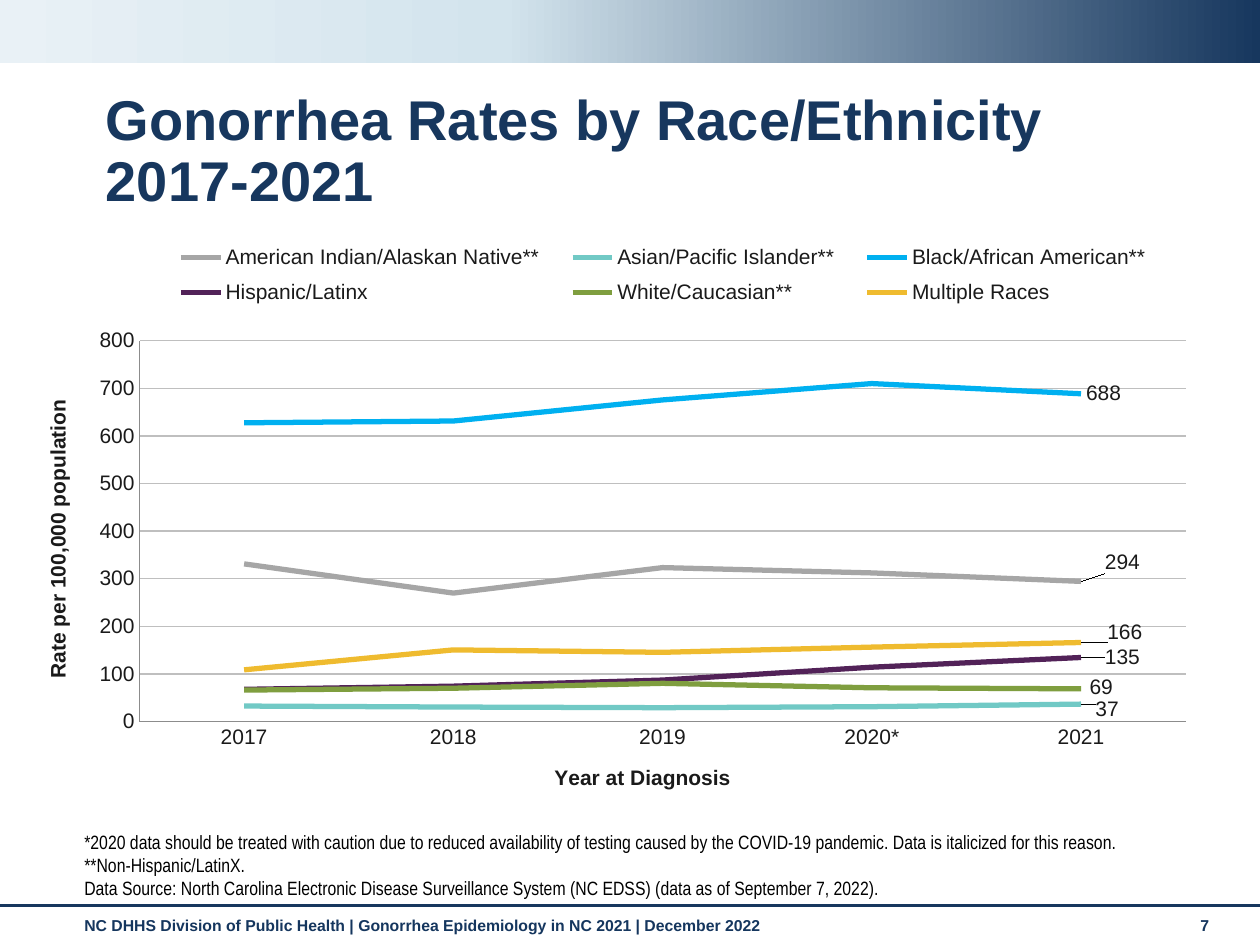
from copy import deepcopy

from lxml import etree
from pptx import Presentation
from pptx import util as u
from pptx.chart import data as chart_data
from pptx.dml import color
from pptx.enum import chart as charts, shapes, text
from pptx.oxml import ns, parse_xml

Cm, Pt, RGB = u.Cm, u.Pt, color.RGBColor.from_string

THEME = {
    "font": "Arial", "note_font": "Arial Narrow",
    "navy": "17375E", "footer": "15365E", "ink": "1A1A1A", "black": "000000",
    "grid": "BFBFBF", "axis": "8C8C8C",
    "banner": [(0, "17375E"), (0.6, "D3E4ED"), (1, "E9F1F6")],
    "title_size": 32, "chart_size": 12, "note_size": 11, "footer_size": 9,
}

YEARS = ["2017", "2018", "2019", "2020*", "2021"]
SERIES = [
    ("American Indian/Alaskan Native**", "A6A6A6", (331.2, 269.8, 323.3, 312.2, 294.4), (0.016, -0.032)),
    ("Asian/Pacific Islander**", "71C9C5", (32.7, 30.6, 29.2, 31.3, 36.7), (0.008, 0.008)),
    ("Black/African American**", "00B0F0", (627.5, 631.2, 675.5, 709.9, 688.4), None),
    ("Hispanic/Latinx", "522258", (67.7, 74.4, 87.2, 114.2, 134.6), (0.016, 0)),
    ("White/Caucasian**", "7F9E3F", (66.2, 70, 80.4, 71, 68.8), (0.003, -0.002)),
    ("Multiple Races", "EFBB2F", (108.7, 150.6, 145.4, 156.4, 166.1), (0.018, -0.017)),
]
NOTES = [
    "*2020 data should be treated with caution due to reduced availability of testing caused by the COVID-19 pandemic. Data is italicized for this reason.",
    "**Non-Hispanic/LatinX.",
    "Data Source: North Carolina Electronic Disease Surveillance System (NC EDSS) (data as of September 7, 2022).",
]


def write_text(shape, box, lines, anchor, spacing, font_format):
    shape.left, shape.top, shape.width, shape.height = map(Cm, box)
    frame = shape.text_frame
    frame.text = "\n".join(lines)
    frame.word_wrap = True
    frame.auto_size = text.MSO_AUTO_SIZE.NONE
    frame.vertical_anchor = anchor
    for paragraph in frame.paragraphs:
        paragraph.alignment = text.PP_ALIGN.LEFT
        paragraph.line_spacing = spacing
        for run in paragraph.runs:
            run.font.color.rgb = RGB(font_format["color"])
            for name in ("name", "size", "bold"):
                setattr(run.font, name, font_format[name])


def manual_layout(target="", **values):
    inner = f'<c:layoutTarget val="{target}"/>' if target else ""
    if target or "w" in values:
        inner += '<c:xMode val="edge"/><c:yMode val="edge"/>'
    inner += "".join(f'<c:{key} val="{value}"/>' for key, value in values.items())
    return parse_xml(f'<c:layout {ns.nsdecls("c")}><c:manualLayout>{inner}</c:manualLayout></c:layout>')


presentation = Presentation()
presentation.slide_width, presentation.slide_height = Cm(25.4), Cm(19.05)
slide = presentation.slides.add_slide(presentation.slide_layouts[5])

banner = slide.shapes.add_shape(shapes.MSO_SHAPE.RECTANGLE, 0, 0, Cm(25.4), Cm(1.27))
banner.shadow.inherit = False
banner.line.fill.background()
banner.fill.gradient()
banner.fill.gradient_angle = 180
stop_list = banner._element.spPr.find(".//" + ns.qn("a:gsLst"))
stop_list.append(deepcopy(stop_list[0]))
for stop, (position, hue) in zip(banner.fill.gradient_stops, THEME["banner"]):
    stop.position = position
    stop.color.rgb = RGB(hue)

rule = slide.shapes.add_connector(shapes.MSO_CONNECTOR.STRAIGHT, 0, Cm(18.26), Cm(25.4), Cm(18.26))
rule.line.color.rgb = RGB(THEME["navy"])
rule.line.width = Pt(1.75)
etree.SubElement(rule._element.spPr, ns.qn("a:effectLst"))

title_format = {"name": THEME["font"], "size": Pt(THEME["title_size"]), "bold": True, "color": THEME["navy"]}
note_format = {"name": THEME["note_font"], "size": Pt(THEME["note_size"]), "bold": False, "color": THEME["black"]}
footer_format = {"name": THEME["font"], "size": Pt(THEME["footer_size"]), "bold": True, "color": THEME["footer"]}
top, bottom = text.MSO_ANCHOR.TOP, text.MSO_ANCHOR.BOTTOM
write_text(slide.shapes.title, (1.88, 1.73, 21.79, 1.52),
           ["Gonorrhea Rates by Race/Ethnicity\v2017-2021"], top, 0.9, title_format)
for box, lines, anchor, font_format in [
    ((1.45, 17.35, 23.11, 0.91), NOTES, bottom, note_format),
    ((1.45, 18.34, 22.2, 0.74),
     ["NC DHHS Division of Public Health | Gonorrhea Epidemiology in NC 2021 | December 2022"], top, footer_format),
    ((23.95, 18.34, 1.12, 0.74), ["7"], top, footer_format),
]:
    write_text(slide.shapes.add_textbox(0, 0, 0, 0), box, lines, anchor, 1.0, font_format)

rates = chart_data.CategoryChartData(number_format="0")
rates.categories = YEARS
for name, hue, values, offset in SERIES:
    rates.add_series(name, values)
chart = slide.shapes.add_chart(charts.XL_CHART_TYPE.LINE, Cm(0.74), Cm(4.34), Cm(23.83), Cm(12.04), rates).chart
chart.has_title = False
chart.font.name = THEME["font"]
chart.font.size = Pt(THEME["chart_size"])
chart.font.color.rgb = RGB(THEME["ink"])

plot_area = chart._chartSpace.chart.plotArea
for old_layout in plot_area.findall(ns.qn("c:layout")):
    plot_area.remove(old_layout)
plot_area.insert(0, manual_layout("inner", x=0.087, y=0.21, w=0.885, h=0.638))

chart.has_legend = True
chart.legend.position = charts.XL_LEGEND_POSITION.TOP
chart.legend.include_in_layout = False
legend_element = chart.legend._element
for old_layout in legend_element.findall(ns.qn("c:layout")):
    legend_element.remove(old_layout)
legend_element.find(ns.qn("c:legendPos")).addnext(manual_layout(x=0.1, y=0.03, w=0.86, h=0.14))

for axis, caption in [(chart.category_axis, "Year at Diagnosis"),
                      (chart.value_axis, "Rate per 100,000 population")]:
    axis.major_tick_mark = axis.minor_tick_mark = charts.XL_TICK_MARK.NONE
    axis.format.line.color.rgb = RGB(THEME["axis"])
    axis.format.line.width = Pt(0.75)
    axis.axis_title.text_frame.text = caption
    font = axis.axis_title.text_frame.paragraphs[0].runs[0].font
    font.color.rgb = RGB(THEME["ink"])
    for key, value in {"name": THEME["font"], "size": Pt(THEME["chart_size"]), "bold": True}.items():
        setattr(font, key, value)
for key, value in {"minimum_scale": 0, "maximum_scale": 800, "major_unit": 100,
                   "has_major_gridlines": True}.items():
    setattr(chart.value_axis, key, value)
chart.value_axis.major_gridlines.format.line.color.rgb = RGB(THEME["grid"])
chart.value_axis.major_gridlines.format.line.width = Pt(0.75)

for series, (name, hue, values, offset) in zip(chart.plots[0].series, SERIES):
    series.smooth = False
    series.marker.style = charts.XL_MARKER_STYLE.NONE
    series.format.line.color.rgb = RGB(hue)
    series.format.line.width = Pt(3)
    series.data_labels.show_value = False
    series.points[len(YEARS) - 1].data_label.position = charts.XL_LABEL_POSITION.RIGHT
    labels = series.data_labels._element
    index = labels.find(ns.qn("c:dLbl")).find(ns.qn("c:idx"))
    index.addnext(parse_xml(f'<c:numFmt {ns.nsdecls("c")} formatCode="0" sourceLinked="0"/>'))
    if offset:
        index.addnext(manual_layout(x=offset[0], y=offset[1]))
    for old_leader in labels.findall(ns.qn("c:showLeaderLines")):
        labels.remove(old_leader)
    labels.append(parse_xml(f'<c:showLeaderLines {ns.nsdecls("c")} val="1"/>'))

presentation.save("out.pptx")
